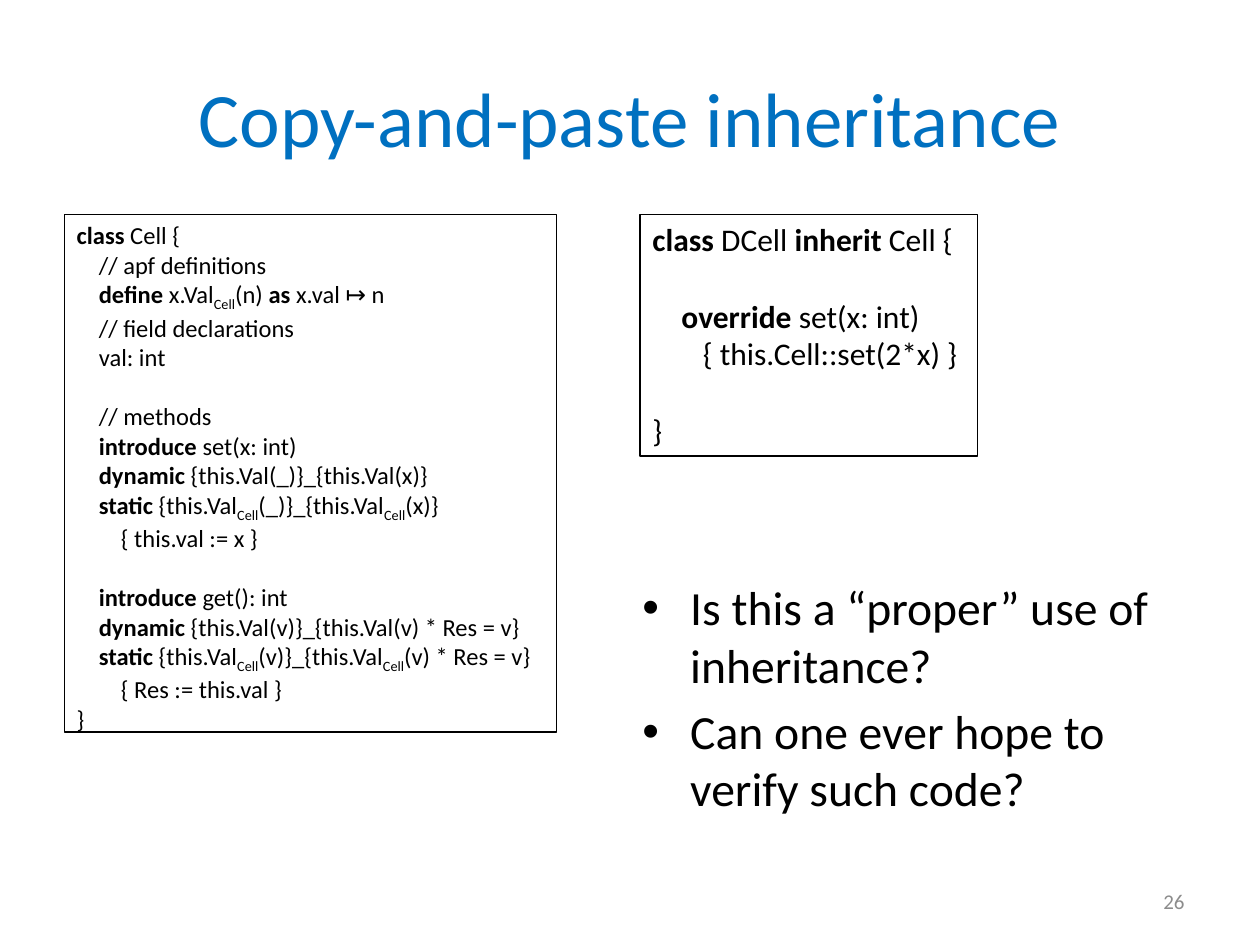
from lxml.etree import SubElement
from pptx import Presentation
from pptx.dml.color import RGBColor
from pptx.enum.shapes import MSO_SHAPE as Shape
from pptx.enum.text import MSO_ANCHOR as Anchor, PP_ALIGN as Align
from pptx.oxml.ns import qn
from pptx.util import Inches, Pt

# Each code line: indent in inches, whether a gap precedes it, and its text.
# `...` marks a keyword in bold, ~...~ a subscript.
STEP = 0.176
CELL_CODE = [
    (0, False, "`class` Cell {"),
    (STEP, False, "// apf definitions"),
    (STEP, False, "`define `x.Val~Cell~(n) `as` x.val ↦ n"),
    (STEP, False, "// field declarations"),
    (STEP, False, "val: int"),
    (STEP, True, "// methods"),
    (STEP, False, "`introduce` set(x: int)"),
    (STEP, False, "`dynamic` {this.Val(_)}_{this.Val(x)}"),
    (STEP, False, "`static` {this.Val~Cell~(_)}_{this.Val~Cell~(x)}"),
    (2 * STEP, False, "{ this.val := x }"),
    (STEP, True, "`introduce` get(): int"),
    (STEP, False, "`dynamic` {this.Val(v)}_{this.Val(v) * Res = v}"),
    (STEP, False, "`static` {this.Val~Cell~(v)}_{this.Val~Cell~(v) * Res = v}"),
    (2 * STEP, False, "{ Res := this.val }"),
    (0, False, "}"),
]
DCELL_CODE = [
    (0, False, "`class `DCell `inherit` Cell {"),
    (0.23, True, "`override` set(x: int)"),
    (0.4, False, "{ this.Cell::set(2*x) }"),
    (0, True, "}"),
]
QUESTIONS = [
    "Is this a “proper” use of inheritance?",
    "Can one ever hope to verify such code?",
]


def color(hex_value):
    return RGBColor.from_string(hex_value)


def add_span(para, text, size, hex_color="000000", **formats):
    span = para.add_run()
    span.text = text
    formats = {"name": "Calibri", "size": Pt(size), **formats}
    for name, value in formats.items():
        setattr(span.font, name, value)
    span.font.color.rgb = color(hex_color)
    return span


def place(shape, left, top, width, height):
    bounds = {"left": left, "top": top, "width": width, "height": height}
    for name, value in bounds.items():
        setattr(shape, name, Inches(value))


def paragraphs(frame, items):
    """Yield a paragraph of the frame with each item."""
    for index, item in enumerate(items):
        yield (frame.add_paragraph() if index else frame.paragraphs[0]), item


def indent(para, left, first=0):
    properties = para._p.get_or_add_pPr()
    properties.set("marL", str(Inches(left)))
    properties.set("indent", str(Inches(first)))
    return properties


def add_marked_text(para, text, size):
    """Write text whose `...` parts are bold and ~...~ parts subscript."""
    for bold_index, part in enumerate(text.split("`")):
        for sub_index, piece in enumerate(part.split("~")):
            if not piece:
                continue
            span = add_span(para, piece, size, bold=bold_index % 2 == 1)
            if sub_index % 2:
                span._r.get_or_add_rPr().set("baseline", "-25000")


def add_code_box(page, bounds, lines, size):
    box = page.shapes.add_shape(Shape.RECTANGLE, *map(Inches, bounds))
    box.shadow.inherit = False
    box.fill.background()
    box.line.color.rgb = color("000000")
    box.line.width = Pt(0.75)
    frame = box.text_frame
    frame.word_wrap = True
    frame.vertical_anchor = Anchor.TOP
    for para, (left, gap, text) in paragraphs(frame, lines):
        para.alignment = Align.LEFT
        indent(para, left)
        if gap:
            para.space_before = Pt(round(size * 1.22))
        add_marked_text(para, text, size)


def add_text_box(page, bounds):
    box = page.shapes.add_textbox(*map(Inches, bounds))
    box.text_frame.word_wrap = True
    return box.text_frame


def add_bullets(page, bounds, texts, size):
    for para, text in paragraphs(add_text_box(page, bounds), texts):
        para.space_before = Pt(size * 0.2)
        properties = indent(para, 0.38, -0.38)
        SubElement(properties, qn("a:buFont"), typeface="Arial")
        SubElement(properties, qn("a:buChar"), char="•")
        add_span(para, text, size)


def set_title(page, text):
    title = page.shapes.title
    place(title, 0.5, 0.3, 9, 1.25)
    title.text_frame.vertical_anchor = Anchor.MIDDLE
    para = title.text_frame.paragraphs[0]
    para.alignment = Align.CENTER
    add_span(para, text, 44, "0070C0")


def add_page_number(page, number):
    frame = add_text_box(page, (7.17, 6.95, 2.33, 0.4))
    frame.vertical_anchor = Anchor.MIDDLE
    para = frame.paragraphs[0]
    para.alignment = Align.RIGHT
    add_span(para, number, 12, "8C8C8C")


def main():
    deck = Presentation()
    deck.slide_width, deck.slide_height = Inches(10), Inches(7.5)
    page = deck.slides.add_slide(deck.slide_layouts.get_by_name("Title Only"))
    set_title(page, "Copy-and-paste inheritance")
    add_bullets(page, (5, 4.54, 4.74, 1.65), QUESTIONS, 27.2)
    add_code_box(page, (0.51, 1.7, 3.91, 4.11), CELL_CODE, 14)
    add_code_box(page, (5.08, 1.7, 2.68, 1.92), DCELL_CODE, 18)
    add_page_number(page, "26")
    deck.save("out.pptx")


if __name__ == "__main__":
    main()
